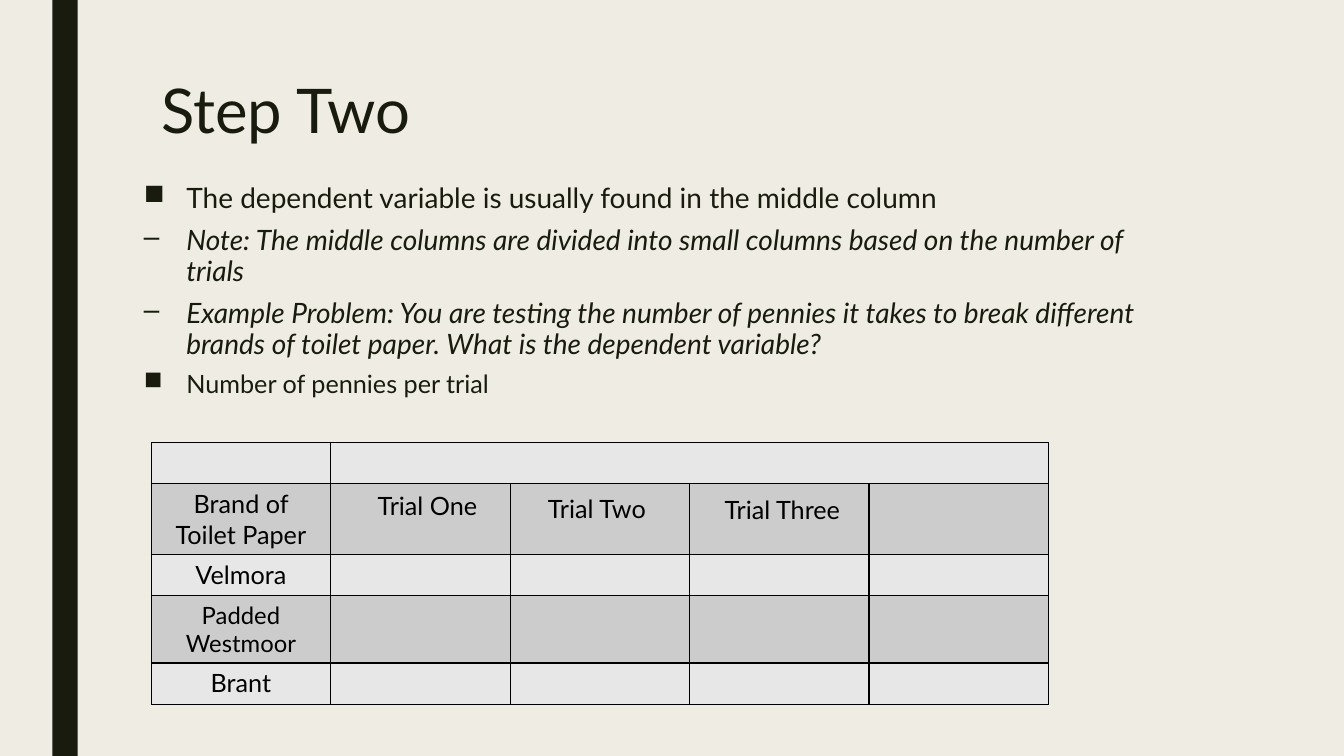
from lxml import etree
from pptx import Presentation
from pptx.dml.color import RGBColor
from pptx.enum.shapes import MSO_SHAPE
from pptx.enum.text import MSO_ANCHOR, PP_ALIGN
from pptx.oxml.ns import qn
from pptx.util import Inches, Pt

RECTANGLE = MSO_SHAPE.RECTANGLE
TOP = MSO_ANCHOR.TOP
CENTER = PP_ALIGN.CENTER
CREAM = RGBColor(0xEF, 0xED, 0xE3)
INK = RGBColor(0x19, 0x1B, 0x0E)
BLACK = RGBColor(0, 0, 0)
BANDS = RGBColor(0xE7, 0xE7, 0xE7), RGBColor(0xCC, 0xCC, 0xCC)
FONT = "Lato"

TITLE = "Step Two"
POINTS = [
    ("■", 20, False, 10, "The dependent variable is usually found in the middle column"),
    ("–", 20, True, 5, "Note: The middle columns are divided into small columns "
                       "based on the number of trials"),
    ("–", 20, True, 5, "Example Problem: You are testing the number of pennies it takes "
                       "to break different brands of toilet paper. "
                       "What is the dependent variable?"),
    ("■", 18, False, 5, "Number of pennies per trial"),
]
ROWS = [
    ("", 18, 0.41),
    ("Brand of Toilet Paper", 18, 0.7),
    ("Velmora", 18, 0.41),
    ("Padded Westmoor", 17, 0.66),
    ("Brant", 18, 0.41),
]
COLUMNS = 5
COLUMN_WIDTH = 1.78
TRIALS = [("Trial One", 3.41, 4.82), ("Trial Two", 5.09, 4.84), ("Trial Three", 6.93, 4.85)]


def style(para, size, color, italic=False):
    font = para.font
    font.name, font.size, font.italic = FONT, Pt(size), italic
    font.color.rgb = color


def add_text(page, left, top, width, height):
    box = page.shapes.add_textbox(Inches(left), Inches(top), Inches(width), Inches(height))
    frame = box.text_frame
    frame.word_wrap = True
    frame.vertical_anchor = TOP
    return frame


def add_bullet(para, mark):
    properties = para._p.get_or_add_pPr()
    properties.set("marL", str(Inches(0.42)))
    properties.set("indent", str(-Inches(0.42)))
    etree.SubElement(properties, qn("a:buChar")).set("char", mark)


def add_borders(cell):
    properties = cell._tc.get_or_add_tcPr()
    for position, side in enumerate(("a:lnL", "a:lnR", "a:lnT", "a:lnB")):
        line = etree.Element(qn(side), w=str(Pt(1)))
        fill = etree.SubElement(line, qn("a:solidFill"))
        etree.SubElement(fill, qn("a:srgbClr")).set("val", str(BLACK))
        properties.insert(position, line)


def add_points(page):
    frame = add_text(page, 1.33, 1.77, 10.5, 3.92)
    for index, (mark, size, italic, before, text) in enumerate(POINTS):
        para = frame.add_paragraph() if index else frame.paragraphs[0]
        para.text = text
        add_bullet(para, mark)
        para.line_spacing = 0.94
        para.space_before, para.space_after = Pt(before), Pt(2)
        style(para, size, INK, italic)


def add_trial_table(page):
    height = sum(row[2] for row in ROWS)
    table = page.shapes.add_table(
        len(ROWS), COLUMNS, Inches(1.5), Inches(4.39),
        Inches(COLUMNS * COLUMN_WIDTH), Inches(height)).table
    table.first_row = table.horz_banding = False
    for column in table.columns:
        column.width = Inches(COLUMN_WIDTH)
    for r, (label, size, row_height) in enumerate(ROWS):
        table.rows[r].height = Inches(row_height)
        for c in range(COLUMNS):
            cell = table.cell(r, c)
            cell.fill.solid()
            cell.fill.fore_color.rgb = BANDS[r % 2]
            add_borders(cell)
            para = cell.text_frame.paragraphs[0]
            para.text = "" if c else label
            para.alignment = CENTER
            style(para, size, BLACK)
    table.cell(0, 1).merge(table.cell(0, COLUMNS - 1))


def main():
    deck = Presentation()
    deck.slide_width, deck.slide_height = Inches(13.33), Inches(7.5)
    page = deck.slides.add_slide(deck.slide_layouts[6])
    page.background.fill.solid()
    page.background.fill.fore_color.rgb = CREAM

    stripe = page.shapes.add_shape(RECTANGLE, Inches(0.52), 0, Inches(0.25), deck.slide_height)
    stripe.shadow.inherit = False
    stripe.fill.solid()
    stripe.fill.fore_color.rgb = INK
    stripe.line.fill.background()

    title = add_text(page, 1.5, 0.75, 10.5, 1.62).paragraphs[0]
    title.text = TITLE
    title.line_spacing = 0.89
    style(title, 44, INK)

    add_points(page)
    add_trial_table(page)
    for text, left, top in TRIALS:
        para = add_text(page, left, top, 1.66, 0.4).paragraphs[0]
        para.text = text
        para.alignment = CENTER
        style(para, 18, BLACK)
    deck.save("out.pptx")


if __name__ == "__main__":
    main()
